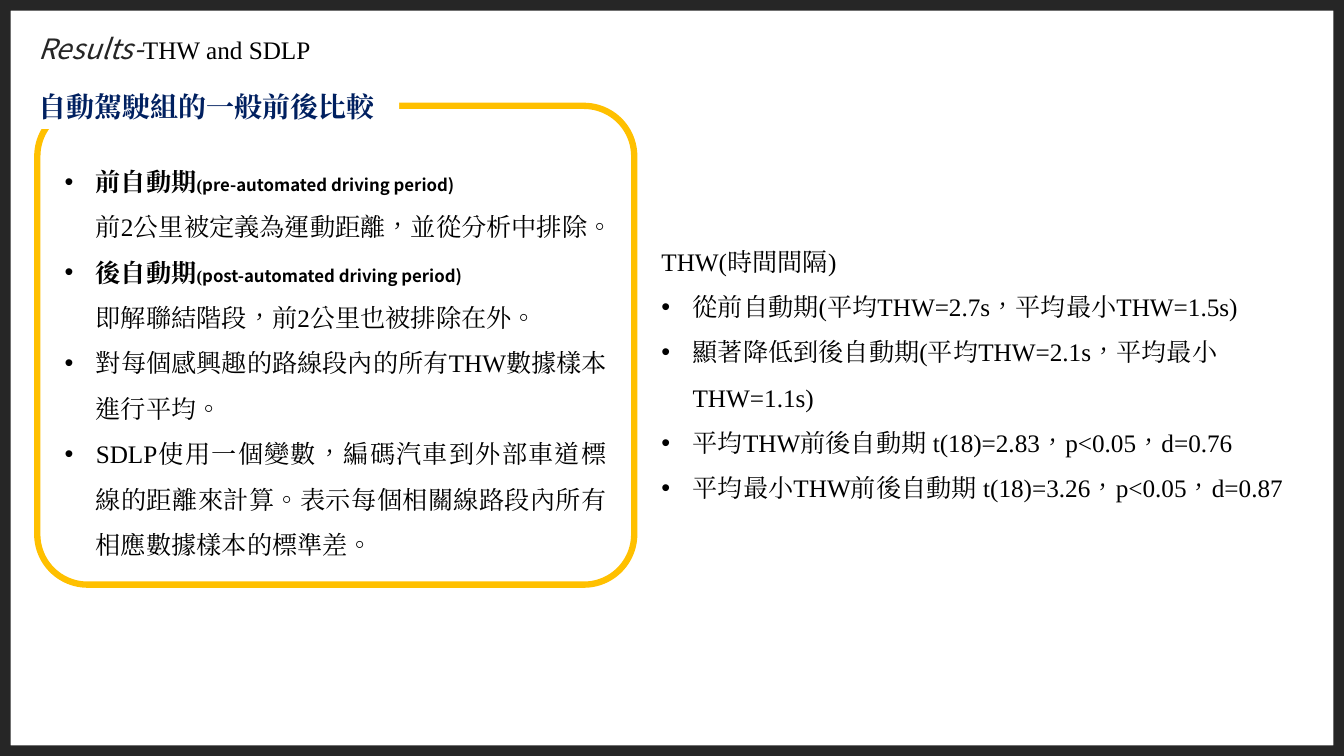
"""Build the slide comparing THW and SDLP before and after automated driving."""
from lxml import etree
from pptx import Presentation
from pptx.dml.color import RGBColor
from pptx.enum.lang import MSO_LANGUAGE_ID
from pptx.enum.shapes import MSO_SHAPE
from pptx.enum.text import MSO_ANCHOR, MSO_AUTO_SIZE, PP_ALIGN
from pptx.oxml.ns import qn
from pptx.util import Inches, Pt

LEFT, JUSTIFY = PP_ALIGN.LEFT, PP_ALIGN.JUSTIFY
TOP, NO_FIT = MSO_ANCHOR.TOP, MSO_AUTO_SIZE.NONE
CHINESE = MSO_LANGUAGE_ID.TRADITIONAL_CHINESE
SERIF, SANS = "Times New Roman", "Noto Sans CJK SC"
COLORS = {"frame": "262626", "text": "000000", "heading": "002060",
          "box": "FFC000", "white": "FFFFFF"}


def add_run(p, text, size=18, font=SERIF, color="text", bold=False, italic=False):
    r = p.add_run()
    r.text = text
    r.font.size = Pt(size)
    r.font.name = font
    r.font.bold = bold
    r.font.italic = italic
    r.font.color.rgb = RGBColor.from_string(COLORS[color])
    r.font.language_id = CHINESE
    etree.SubElement(r.font._element, qn("a:ea"), typeface=font)


def format_paragraph(p, bullet=False, align=LEFT, spacing=1.5):
    p.alignment = align
    p.line_spacing = spacing
    p.space_before = Pt(0)
    pPr = p._p.get_or_add_pPr()
    indent = Inches(0.31) if bullet else 0
    pPr.set("marL", str(indent))
    pPr.set("indent", str(-indent))
    if bullet:
        etree.SubElement(pPr, qn("a:buFont"), typeface="Arial")
        etree.SubElement(pPr, qn("a:buChar"), char="•")
    else:
        etree.SubElement(pPr, qn("a:buNone"))


prs = Presentation()
prs.slide_width, prs.slide_height = Inches(13.33), Inches(7.5)
s = prs.slides.add_slide(prs.slide_layouts[3])
title, left_list, right_list = list(s.placeholders)[:3]

placements = [(title, 0.28, 0.1, 4.3, 0.55),
              (left_list, 0.54, 1.45, 5.58, 4.19),
              (right_list, 6.46, 2.24, 6.88, 2.83)]
for sp, x, y, w, h in placements:
    sp.left, sp.top, sp.width, sp.height = map(Inches, (x, y, w, h))
    tf = sp.text_frame
    tf.word_wrap = True
    tf.auto_size = NO_FIT
    tf.vertical_anchor = TOP

p = title.text_frame.paragraphs[0]
format_paragraph(p)
add_run(p, "Results-", 20, SANS, "frame", italic=True)
add_run(p, "THW and SDLP")

periods = [
    ("前自動期", "pre-automated driving period)", "前2公里被定義為運動距離，並從分析中排除。"),
    ("後自動期", "post-automated driving period)", "即解聯結階段，前2公里也被排除在外。"),
]
measures = [
    "對每個感興趣的路線段內的所有THW數據樣本進行平均。",
    "SDLP使用一個變數，編碼汽車到外部車道標線的距離來計算。表示每個相關線路段內所有相應數據樣本的標準差。",
]
tf = left_list.text_frame
for i, (name, english, definition) in enumerate(periods):
    p = tf.add_paragraph() if i else tf.paragraphs[0]
    format_paragraph(p, bullet=True)
    add_run(p, name, bold=True)
    add_run(p, "(", 12, bold=True)
    add_run(p, english, 12, SANS, bold=True)
    p.add_line_break()
    etree.SubElement(p._p.find(qn("a:br")), qn("a:rPr"), sz="1200")
    add_run(p, definition)
for measure in measures:
    p = tf.add_paragraph()
    format_paragraph(p, bullet=True, align=JUSTIFY)
    add_run(p, measure)

findings = [
    "THW(時間間隔)",
    "從前自動期(平均THW=2.7s，平均最小THW=1.5s)",
    "顯著降低到後自動期(平均THW=2.1s，平均最小THW=1.1s)",
    "平均THW前後自動期 t(18)=2.83，p<0.05，d=0.76",
    "平均最小THW前後自動期 t(18)=3.26，p<0.05，d=0.87",
]
tf = right_list.text_frame
for i, finding in enumerate(findings):
    p = tf.add_paragraph() if i else tf.paragraphs[0]
    format_paragraph(p, bullet=i > 0)
    add_run(p, finding)

frame = s.shapes.add_shape(MSO_SHAPE.FRAME, 0, 0, prs.slide_width, prs.slide_height)
frame.adjustments[0] = 0.014
frame.fill.solid()
frame.fill.fore_color.rgb = RGBColor.from_string(COLORS["frame"])
frame.line.fill.background()

box = s.shapes.add_shape(MSO_SHAPE.ROUNDED_RECTANGLE, Inches(0.37), Inches(1.05),
                         Inches(5.92), Inches(4.75))
box.adjustments[0] = 0.105
box.fill.background()
box.line.color.rgb = RGBColor.from_string(COLORS["box"])
box.line.width = Pt(4.5)

heading = s.shapes.add_shape(MSO_SHAPE.RECTANGLE, Inches(0.28), Inches(0.84),
                             Inches(3.68), Inches(0.44))
heading.fill.solid()
heading.fill.fore_color.rgb = RGBColor.from_string(COLORS["white"])
heading.line.fill.background()
heading.text_frame.word_wrap = True
heading.text_frame.vertical_anchor = TOP
p = heading.text_frame.paragraphs[0]
format_paragraph(p, spacing=1.0)
add_run(p, "自動駕駛組的一般前後比較", 20, color="heading", bold=True)

for sp in (frame, box, heading):
    sp.shadow.inherit = False

prs.save("out.pptx")
